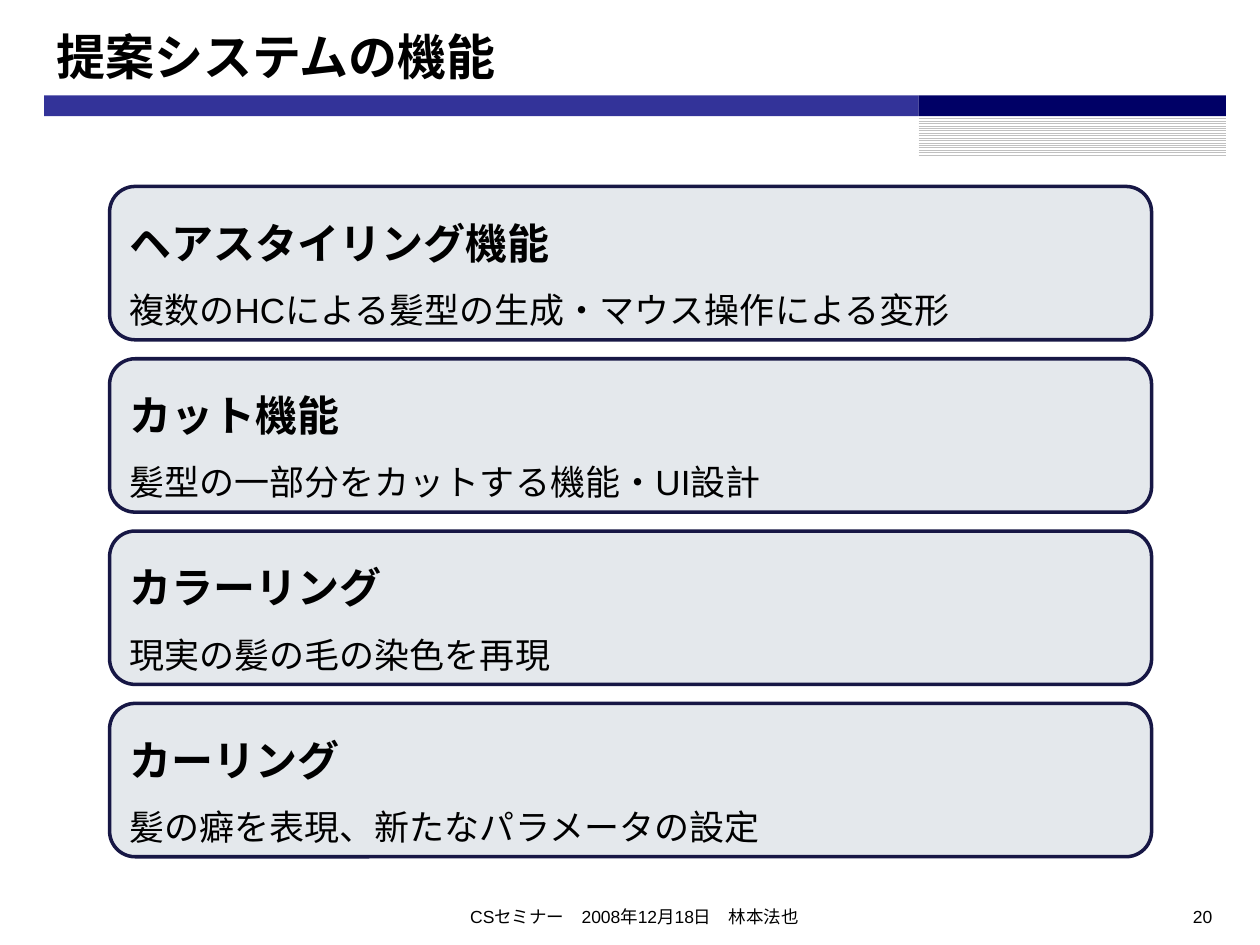
from dataclasses import dataclass

from pptx import Presentation
from pptx.dml.color import RGBColor as RGB
from pptx.enum.dml import MSO_PATTERN as Pattern
from pptx.enum.shapes import MSO_SHAPE as Shape
from pptx.enum.text import MSO_ANCHOR as Anchor, MSO_AUTO_SIZE as AutoSize, PP_ALIGN as Align
from pptx.util import Inches, Pt


@dataclass(frozen=True)
class Theme:
    font: str = "Arial"
    ink: RGB = RGB(0, 0, 0)
    paper: RGB = RGB(0xFF, 0xFF, 0xFF)
    band: RGB = RGB(0x33, 0x33, 0x99)
    accent: RGB = RGB(0x00, 0x00, 0x66)
    stripe: RGB = RGB(0xC0, 0xC0, 0xC0)
    card: RGB = RGB(0xE4, 0xE8, 0xEC)
    border: RGB = RGB(0x17, 0x17, 0x45)
    title: int = 28
    heading: int = 24
    detail: int = 20
    footer: int = 10


@dataclass(frozen=True)
class Box:
    left: float
    top: float
    width: float
    height: float

    def share(self, x, y, width, height):
        return Box(self.left + x * self.width, self.top + y * self.height,
                   width * self.width, height * self.height)

    def rows(self, count, gap):
        height = (self.height - gap * (count - 1)) / count
        return [Box(self.left, self.top + i * (height + gap), self.width, height)
                for i in range(count)]

    def emu(self):
        return [Inches(n) for n in (self.left, self.top, self.width, self.height)]


THEME = Theme()
PAGE = Box(0, 0, 10, 7.5)
HEADER = Box(0.35, 0.13, 9.38, 1.1)
CARDS = Box(0.87, 1.48, 8.27, 5.32)
FOOTER = Box(0.35, 7.14, 9.37, 0.29)
CARD_GAP = 0.15

FEATURES = [
    ("ヘアスタイリング機能", "複数のHCによる髪型の生成・マウス操作による変形"),
    ("カット機能", "髪型の一部分をカットする機能・UI設計"),
    ("カラーリング", "現実の髪の毛の染色を再現"),
    ("カーリング", "髪の癖を表現、新たなパラメータの設定"),
]


def write(paragraph, text, size, bold=False, align=Align.LEFT):
    paragraph.text = text
    paragraph.alignment = align
    font = paragraph.font
    font.name, font.size, font.bold = THEME.font, Pt(size), bold
    font.color.rgb = THEME.ink


def add_panel(slide, box, color, kind=Shape.RECTANGLE):
    panel = slide.shapes.add_shape(kind, *box.emu())
    panel.shadow.inherit = False
    panel.fill.solid()
    panel.fill.fore_color.rgb = color
    panel.line.fill.background()
    return panel


def add_header(slide, box, text):
    split, title_end, band_end = 0.74, 0.57, 0.72
    band = band_end - title_end
    add_panel(slide, box.share(0, title_end, split, band), THEME.band)
    stripes = add_panel(slide, box.share(split, band_end, 1 - split, 1 - band_end), THEME.paper)
    stripes.fill.patterned()
    stripes.fill.pattern = Pattern.LIGHT_HORIZONTAL
    stripes.fill.fore_color.rgb = THEME.stripe
    stripes.fill.back_color.rgb = THEME.paper
    add_panel(slide, box.share(split, title_end, 1 - split, band), THEME.accent)

    title = slide.shapes.title
    title.left, title.top, title.width, title.height = box.share(0, 0, 1, title_end).emu()
    frame = title.text_frame
    frame.auto_size = AutoSize.NONE
    frame.vertical_anchor = Anchor.MIDDLE
    write(frame.paragraphs[0], text, THEME.title, bold=True)


def add_card(slide, box, heading, detail):
    card = add_panel(slide, box, THEME.card, Shape.ROUNDED_RECTANGLE)
    card.line.color.rgb = THEME.border
    card.line.width = Pt(2)
    frame = card.text_frame
    frame.word_wrap = True
    frame.vertical_anchor = Anchor.MIDDLE
    frame.margin_bottom = Inches(0.08)
    write(frame.paragraphs[0], heading, THEME.heading, bold=True)
    write(frame.add_paragraph(), detail, THEME.detail)
    for paragraph in frame.paragraphs:
        paragraph.line_spacing = 1.5


def add_cards(slide, box, features):
    for row, (heading, detail) in zip(box.rows(len(features), CARD_GAP), features):
        add_card(slide, row, heading, detail)


def add_footer(slide, box, seminar, page_number):
    notes = [(seminar, box.share(0.33, 0, 0.34, 1), Align.CENTER),
             (page_number, box.share(0.75, 0, 0.25, 1), Align.RIGHT)]
    for text, area, align in notes:
        frame = slide.shapes.add_textbox(*area.emu()).text_frame
        frame.word_wrap = True
        write(frame.paragraphs[0], text, THEME.footer, align=align)


def main():
    deck = Presentation()
    deck.slide_width, deck.slide_height = Inches(PAGE.width), Inches(PAGE.height)
    slide = deck.slides.add_slide(deck.slide_layouts.get_by_name("Title Only"))
    slide.background.fill.solid()
    slide.background.fill.fore_color.rgb = THEME.paper
    add_header(slide, HEADER, "提案システムの機能")
    add_cards(slide, CARDS, FEATURES)
    add_footer(slide, FOOTER, "CSセミナー　2008年12月18日　林本法也", "20")
    deck.save("out.pptx")


if __name__ == "__main__":
    main()
